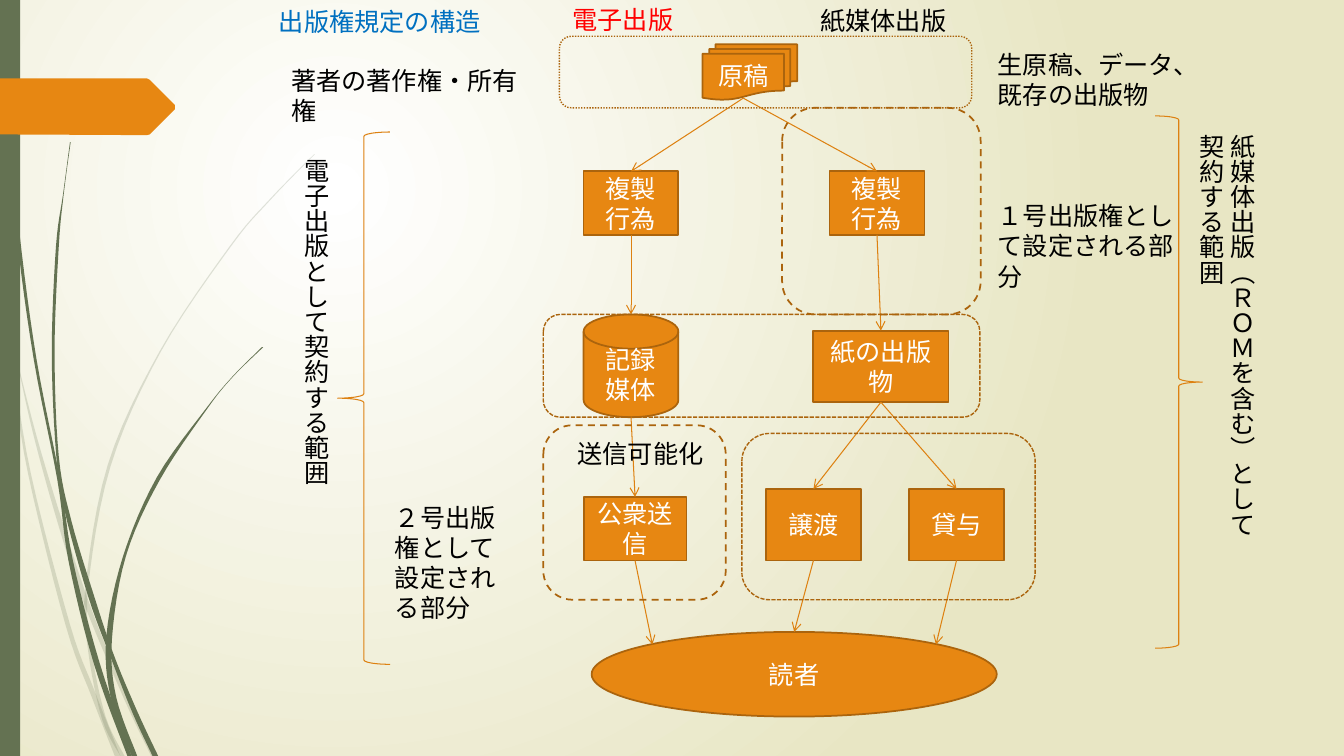
from lxml.etree import SubElement
from pptx import Presentation
from pptx.dml.color import RGBColor
from pptx.enum.dml import MSO_LINE
from pptx.enum.shapes import MSO_CONNECTOR, MSO_SHAPE
from pptx.enum.text import MSO_ANCHOR, MSO_AUTO_SIZE, PP_ALIGN
from pptx.oxml.ns import qn
from pptx.util import Pt

# Content; every length is in points
COLORS = {"green": "647252", "orange": "E78712", "edge": "AB640D", "arrow": "DD8111",
          "white": "FFFFFF", "cream": "E8E6C4", "black": "000000",
          "red": "FF0000", "blue": "0070C0"}
FONT, SIZE = "League Spartan", 18

# Grass blades: opacity in percent, left edge, right edge
BLADES = [
    (20, [(0, 215), (8, 262), (20, 338), (47, 447), (66, 499), (82, 540)],
         [(0, 203), (8, 252), (22, 338), (50, 446), (67, 492), (86, 540)]),
    (20, [(10, 248), (24, 311), (42, 376), (60, 431), (89, 500), (108, 540)],
         [(10, 248), (26, 311), (45, 374), (66, 437), (91, 498), (112, 540)]),
    (20, [(224.5, 110), (193, 142), (164, 176), (114, 251), (77, 332), (61, 420),
          (63, 465), (73, 514), (86, 540)],
         [(225, 110), (193, 143), (165, 176), (115, 251), (79, 333), (63, 420),
          (65.5, 465), (75.5, 512), (89, 540)]),
    (100, [(2, 0), (5, 79), (12, 168), (24, 256), (41, 343), (49, 401), (67, 474), (91, 540)],
          [(3, 0), (6, 79), (14, 167), (26, 256), (43, 343), (52, 400), (71, 473), (94, 540)]),
    (100, [(50, 101.5), (45, 139), (40, 176), (37, 251), (40, 323), (46, 364), (63, 426),
           (80, 472), (95, 510), (109, 540)],
          [(50.5, 101.5), (45.5, 139), (42, 176), (39, 251), (42, 326), (51, 372), (67, 425),
           (81, 467), (98, 508), (113, 540)]),
    (100, [(187, 248), (166, 269), (147, 292), (112, 341), (88, 397), (76, 454),
           (79, 498), (94, 540)],
          [(188, 248), (166.5, 269), (148, 292), (114, 343), (90, 397), (80, 456),
           (83, 498), (98, 540)]),
]
TAG = [(0, 56), (105, 56), (107, 57), (125, 75), (125, 78), (107, 96), (105, 96.5), (0, 96)]

# Steps: key, text, shape, left, top, width, height
STEPS = [
    ("manuscript", "原稿", MSO_SHAPE.FLOWCHART_MULTIDOCUMENT, 501.8, 31.7, 67.7, 39.6),
    ("e_copy", "複製行為", MSO_SHAPE.FLOWCHART_PROCESS, 416.9, 122.4, 67.7, 45.4),
    ("media", "記録媒体", MSO_SHAPE.FLOWCHART_MAGNETIC_DISK, 416.9, 224.6, 67.7, 73.4),
    ("book", "紙の出版物", MSO_SHAPE.RECTANGLE, 581, 236.2, 96.5, 51.1),
    ("transfer", "譲渡", MSO_SHAPE.FLOWCHART_PROCESS, 547.2, 349.2, 67.7, 51.1),
    ("lending", "貸与", MSO_SHAPE.FLOWCHART_PROCESS, 649.4, 349.2, 67.7, 51.1),
    ("sending", "公衆送信", MSO_SHAPE.FLOWCHART_PROCESS, 416.9, 355, 73.4, 45.4),
    ("reader", "読者", MSO_SHAPE.OVAL, 422.6, 451.4, 289.4, 60.5),
    ("p_copy", "複製行為", MSO_SHAPE.FLOWCHART_PROCESS, 592.6, 122.4, 67.7, 45.4),
]

# Arrow ends are fractions of a step's width and height
TOP, BOTTOM, SHEET_FOOT = (0.5, 0), (0.5, 1), (0.43, 0.97)
UPPER_LEFT, UPPER_RIGHT = (0.15, 0.15), (0.85, 0.15)
ARROWS = [
    ("manuscript", SHEET_FOOT, "e_copy", TOP),
    ("e_copy", BOTTOM, "media", TOP),
    ("media", BOTTOM, "sending", TOP),
    ("manuscript", SHEET_FOOT, "p_copy", TOP),
    ("p_copy", BOTTOM, "book", TOP),
    ("book", BOTTOM, "transfer", TOP),
    ("transfer", BOTTOM, "reader", TOP),
    ("book", BOTTOM, "lending", TOP),
    ("lending", BOTTOM, "reader", UPPER_RIGHT),
    ("sending", BOTTOM, "reader", UPPER_LEFT),
]

# Outlines: shape, box, colour, line width, dash
OUTLINES = [
    (MSO_SHAPE.ROUNDED_RECTANGLE, (558.7, 77, 141.8, 147.6), "edge", 1.25, MSO_LINE.DASH),
    (MSO_SHAPE.ROUNDED_RECTANGLE, (388.1, 303.8, 130.3, 124.6), "edge", 1.25, MSO_LINE.DASH),
    (MSO_SHAPE.ROUNDED_RECTANGLE, (399.6, 25.9, 294.5, 51.1), "edge", 1, MSO_LINE.ROUND_DOT),
    (MSO_SHAPE.ROUNDED_RECTANGLE, (388.1, 224.6, 311.8, 73.4), "edge", 1, MSO_LINE.SQUARE_DOT),
    (MSO_SHAPE.ROUNDED_RECTANGLE, (529.9, 309.6, 209.5, 118.8), "edge", 1, MSO_LINE.SQUARE_DOT),
    (MSO_SHAPE.LEFT_BRACE, (241.2, 94.3, 37.4, 380.2), "arrow", 0.75, None),
    (MSO_SHAPE.RIGHT_BRACE, (825.1, 82.8, 33.8, 380.2), "arrow", 0.75, None),
]

# Labels: text, box, colour, vertical
LABELS = [
    ("送信可能化", (405.4, 309.6, 113, 28.8), "black", False),
    ("１号出版権として設定される部分", (705.6, 139.7, 141.8, 72.7), "black", False),
    ("２号出版権として設定される部分", (275, 355, 102.2, 94.3), "black", False),
    ("著者の著作権・所有権", (200.9, 43.2, 193, 51.1), "black", False),
    ("生原稿、データ、既存の出版物", (705.6, 31.7, 141.8, 51.1), "black", False),
    ("電子出版", (401.8, -0.7, 141.8, 28.8), "red", False),
    ("紙媒体出版", (578.9, 0, 130.3, 28.8), "black", False),
    ("出版権規定の構造", (192.2, 0.7, 206.6, 28.8), "blue", False),
    ("電子出版として契約する範囲", (204.5, 105.8, 36, 380.2), "black", True),
    ("紙媒体出版（ＲＯＭを含む）として契約する範囲", (843.1, 88.6, 58.3, 317.5), "black", True),
]


def rgb(name):
    return RGBColor.from_string(COLORS[name])


def paint(sp, fill=None, line=None, width=1.25):
    sp.shadow.inherit = False
    if fill:
        sp.fill.solid()
        sp.fill.fore_color.rgb = rgb(fill)
    else:
        sp.fill.background()
    if line:
        sp.line.color.rgb = rgb(line)
        sp.line.width = Pt(width)
    else:
        sp.line.fill.background()


def write(tf, text, color):
    tf.word_wrap = True
    tf.text = text
    font = tf.paragraphs[0].runs[0].font
    font.name, font.size, font.color.rgb = FONT, Pt(SIZE), rgb(color)


def smooth(pts, steps=6):
    """Catmull-Rom curve through the points."""
    ext = [pts[0], *pts, pts[-1]]
    out = [pts[0]]
    for a, b, c, d in zip(ext, ext[1:], ext[2:], ext[3:]):
        for i in range(1, steps + 1):
            t = i / steps
            out.append(tuple(q + t * ((r - p) + t * ((2 * p - 5 * q + 4 * r - u)
                             + t * (3 * q - p - 3 * r + u))) / 2
                             for p, q, r, u in zip(a, b, c, d)))
    return out


def outline(s, pts):
    pts = [(Pt(x), Pt(y)) for x, y in pts]
    fb = s.shapes.build_freeform(*pts[0])
    fb.add_line_segments(pts[1:])
    return fb.convert_to_shape()


def add_shape(s, kind, box):
    return s.shapes.add_shape(kind, *map(Pt, box))


prs = Presentation()
prs.slide_width, prs.slide_height = Pt(960), Pt(540)
s = prs.slides.add_slide(prs.slide_layouts[6])

# Background glow
fill = s.background.fill
fill.gradient()
for stop, name in zip(fill.gradient_stops, ("white", "cream")):
    stop.color.rgb = rgb(name)
lin = next(s.element.iter(qn("a:lin")))
grad = lin.getparent()
grad.remove(lin)
glow = SubElement(grad, qn("a:path"), {"path": "circle"})
SubElement(glow, qn("a:fillToRect"), {"l": "50000", "t": "50000", "r": "100000", "b": "100000"})

# Grass, side bar and tag
for opacity, left, right in BLADES:
    sp = outline(s, smooth(left) + smooth(right)[::-1])
    paint(sp, "green")
    if opacity < 100:
        color = next(sp.element.spPr.iter(qn("a:srgbClr")))
        SubElement(color, qn("a:alpha"), {"val": str(opacity * 1000)})
paint(add_shape(s, MSO_SHAPE.RECTANGLE, (0, 0, 14.4, 540)), "green")
paint(outline(s, TAG), "orange")

# Steps
boxes = {}
for key, text, kind, *box in STEPS:
    sp = add_shape(s, kind, box)
    paint(sp, "orange", "edge")
    write(sp.text_frame, text, "white")
    sp.text_frame.vertical_anchor = MSO_ANCHOR.MIDDLE
    sp.text_frame.paragraphs[0].alignment = PP_ALIGN.CENTER
    boxes[key] = box


def port(key, at):
    x, y, w, h = boxes[key]
    return Pt(x + w * at[0]), Pt(y + h * at[1])


# Arrows
for start, out, end, into in ARROWS:
    c = s.shapes.add_connector(MSO_CONNECTOR.STRAIGHT, *port(start, out), *port(end, into))
    c.line.color.rgb, c.line.width = rgb("arrow"), Pt(0.75)
    SubElement(c.line._get_or_add_ln(), qn("a:tailEnd"), {"type": "arrow"})
    SubElement(c.element.spPr, qn("a:effectLst"))

# Frames and braces
for kind, box, color, width, dash in OUTLINES:
    sp = add_shape(s, kind, box)
    paint(sp, None, color, width)
    if dash:
        sp.line.dash_style = dash

# Labels
for text, box, color, vertical in LABELS:
    tf = s.shapes.add_textbox(*map(Pt, box)).text_frame
    write(tf, text, color)
    tf.auto_size = MSO_AUTO_SIZE.SHAPE_TO_FIT_TEXT
    if vertical:
        tf._txBody.bodyPr.set("vert", "eaVert")

prs.save("out.pptx")
